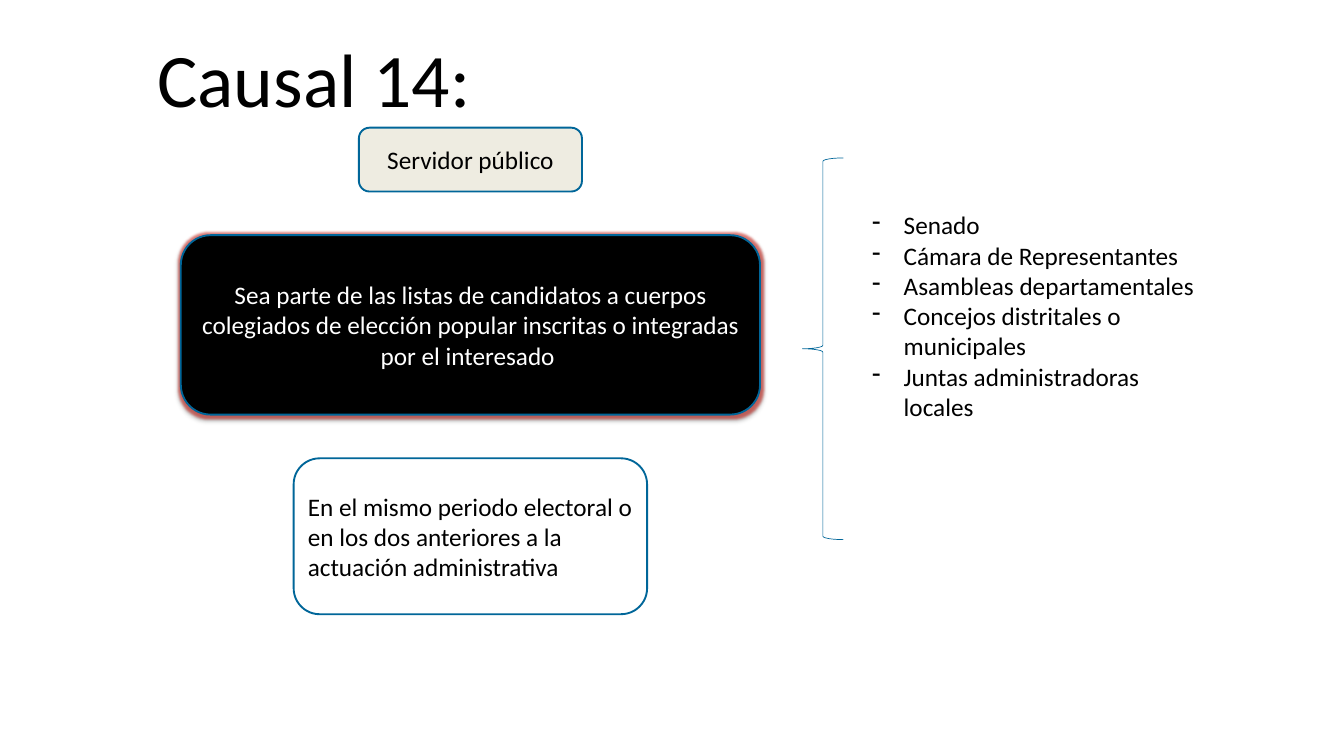
from lxml import etree
from pptx import Presentation
from pptx.dml.color import RGBColor
from pptx.enum.shapes import MSO_SHAPE as SHAPE
from pptx.enum.text import MSO_ANCHOR as ANCHOR, MSO_AUTO_SIZE as AUTO_SIZE, PP_ALIGN as ALIGN
from pptx.oxml import parse_xml
from pptx.oxml.ns import nsdecls, qn
from pptx.util import Inches, Pt

WIDTH, HEIGHT = 20, 11.25
CENTER_X = 0.35 * WIDTH
STACK_TOP, STACK_GAP = 1.9, 0.65
INDENT = Inches(0.47)
FONT = "Calibri"

BLACK = RGBColor(0x00, 0x00, 0x00)
WHITE = RGBColor(0xFF, 0xFF, 0xFF)
CREAM = RGBColor(0xEE, 0xEC, 0xE1)
BLUE = RGBColor(0x00, 0x66, 0x99)

GLOW_AND_SHADOW = f"""
<a:effectLst {nsdecls("a")}>
  <a:glow rad="{Pt(5)}"><a:srgbClr val="D0342C"><a:alpha val="60000"/></a:srgbClr></a:glow>
  <a:outerShdw blurRad="{Pt(4)}" dist="{Pt(3)}" dir="5400000" rotWithShape="0">
    <a:srgbClr val="000000"><a:alpha val="40000"/></a:srgbClr>
  </a:outerShdw>
</a:effectLst>"""

# width, height, fill, text colour, alignment, text
BOXES = [
    (3.32, 0.95, CREAM, BLACK, ALIGN.CENTER, "Servidor público"),
    (8.62, 2.67, BLACK, WHITE, ALIGN.CENTER,
     "Sea parte de las listas de candidatos a cuerpos colegiados de elección "
     "popular inscritas o integradas por el interesado "),
    (5.26, 2.32, WHITE, BLACK, ALIGN.LEFT,
     "En el mismo periodo electoral o en los dos anteriores a la actuación administrativa"),
]
BODIES = [
    "Senado",
    "Cámara de Representantes",
    "Asambleas departamentales",
    "Concejos distritales o municipales",
    "Juntas administradoras locales",
]


def add_dash(p):
    """Give a paragraph a hanging dash bullet."""
    pPr = p._p.get_or_add_pPr()
    pPr.set("marL", str(INDENT))
    pPr.set("indent", str(-INDENT))
    etree.SubElement(pPr, qn("a:buFontTx"))
    etree.SubElement(pPr, qn("a:buChar"), char="-")


def write(tf, *lines, size=27, color=BLACK, align=ALIGN.LEFT, anchor=ANCHOR.TOP, dashed=False):
    tf.word_wrap = True
    tf.auto_size = AUTO_SIZE.NONE
    tf.vertical_anchor = anchor
    for i, line in enumerate(lines):
        p = tf.add_paragraph() if i else tf.paragraphs[0]
        if dashed:
            add_dash(p)
        p.alignment = align
        r = p.add_run()
        r.text = line
        r.font.name = FONT
        r.font.size = Pt(size)
        r.font.color.rgb = color


def add_outlined(slide, kind, left, top, width, height, line_width, fill=None):
    sp = slide.shapes.add_shape(kind, *map(Inches, (left, top, width, height)))
    sp.shadow.inherit = False
    sp.line.color.rgb = BLUE
    sp.line.width = Pt(line_width)
    if fill is None:
        sp.fill.background()
    else:
        sp.fill.solid()
        sp.fill.fore_color.rgb = fill
    return sp


def add_glow(sp):
    spPr = sp._element.spPr
    spPr.replace(spPr.find(qn("a:effectLst")), parse_xml(GLOW_AND_SHADOW))


def add_title(slide, text):
    title = slide.shapes.title
    title.left, title.top, title.width, title.height = map(Inches, (2.24, 0.43, 10.01, 1.46))
    write(title.text_frame, text, size=81)


def add_box_stack(slide):
    top = STACK_TOP
    for width, height, fill, color, align, text in BOXES:
        sp = add_outlined(slide, SHAPE.ROUNDED_RECTANGLE, CENTER_X - width / 2, top,
                          width, height, 2, fill)
        write(sp.text_frame, text, color=color, align=align, anchor=ANCHOR.MIDDLE)
        if fill == BLACK:
            add_glow(sp)
        top += height + STACK_GAP


def add_braced_list(slide, lines):
    add_outlined(slide, SHAPE.LEFT_BRACE, 11.94, 2.35, 0.61, 5.68, 0.75)
    box = slide.shapes.add_textbox(*map(Inches, (12.88, 3.07, 5.13, 3.28)))
    write(box.text_frame, *lines, dashed=True)


def main():
    prs = Presentation()
    prs.slide_width, prs.slide_height = Inches(WIDTH), Inches(HEIGHT)
    slide = prs.slides.add_slide(prs.slide_layouts[5])
    add_title(slide, "Causal 14:")
    add_box_stack(slide)
    add_braced_list(slide, BODIES)
    prs.save("out.pptx")


if __name__ == "__main__":
    main()
